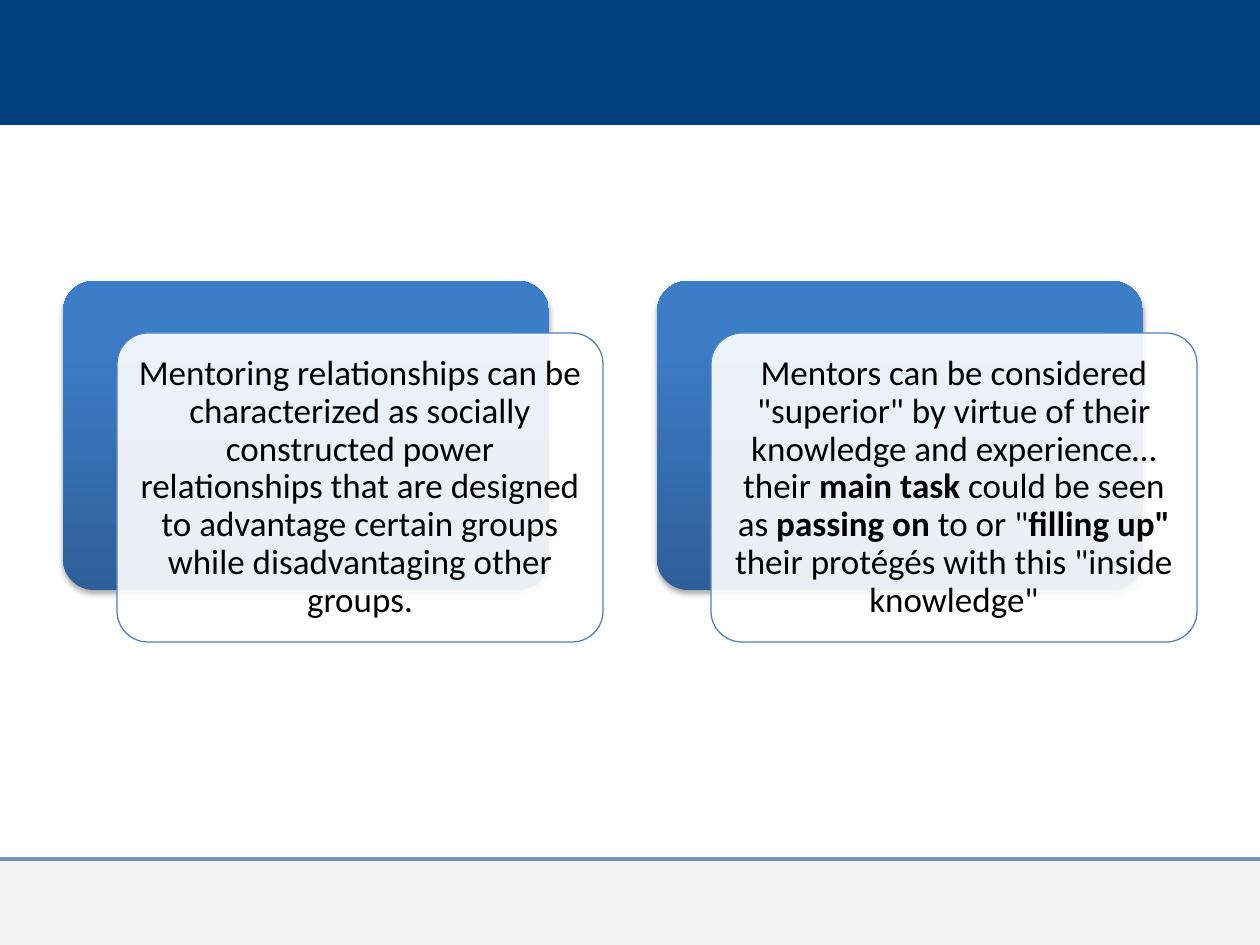
from lxml import etree
from pptx import Presentation
from pptx.dml.color import RGBColor
from pptx.enum.shapes import MSO_CONNECTOR, MSO_SHAPE
from pptx.enum.text import MSO_ANCHOR, PP_ALIGN
from pptx.oxml.ns import qn
from pptx.util import Emu, Pt

RECT = MSO_SHAPE.RECTANGLE
ROUND = MSO_SHAPE.ROUNDED_RECTANGLE
STRAIGHT = MSO_CONNECTOR.STRAIGHT

CARDS = [
    [("Mentoring relationships can be characterized as socially constructed "
      "power relationships that are designed to advantage certain groups "
      "while disadvantaging other groups.", False)],
    [('Mentors can be considered "superior" by virtue of their knowledge '
      "and experience… their ", False),
     ("main task ", True),
     ("could be seen as ", False),
     ("passing on ", True),
     ('to or "', False),
     ('filling up"', True),
     (' their protégés with this "inside knowledge"', False)],
]
COLORS = {"navy": "003E7E", "gray": "808080", "dark": "2F5F99",
          "blue": "3D7CC7", "white": "FFFFFF", "edge": "4F81BD",
          "black": "000000"}
SCALE = 914400 / 126
WIDTH, HEIGHT = 1260, 945
HEADER_H, FOOTER_TOP = 125, 859
CARD_W, CARD_H = 486, 309
LEFT, TOP, PITCH = 63, 281, 594
OFFSET_X, OFFSET_Y = 54, 52
FRAME = {"word_wrap": True, "vertical_anchor": MSO_ANCHOR.MIDDLE,
         **{f"margin_{side}": Emu(int(10 * SCALE))
            for side in ("left", "top", "right", "bottom")}}
PARAGRAPH = {"alignment": PP_ALIGN.CENTER, "line_spacing": 0.9}
FONT = {"name": "Calibri", "size": Pt(20)}


def px(n):
    return Emu(round(n * SCALE))


def rgb(name):
    return RGBColor.from_string(COLORS[name])


def apply(obj, values):
    for key, value in values.items():
        setattr(obj, key, value)


def set_alpha(fill, percent):
    color = fill._xPr.find(".//" + qn("a:srgbClr"))
    etree.SubElement(color, qn("a:alpha"), val=str(percent * 1000))


def add_box(slide, kind, x, y, w, h, color=None, alpha=None):
    sp = slide.shapes.add_shape(kind, px(x), px(y), px(w), px(h))
    sp.shadow.inherit = False
    sp.line.fill.background()
    if kind == ROUND:
        sp.adjustments[0] = 0.1
    if color:
        sp.fill.solid()
        sp.fill.fore_color.rgb = rgb(color)
    if alpha:
        set_alpha(sp.fill, alpha)
    return sp


def add_back(slide, x, y):
    sp = add_box(slide, ROUND, x, y, CARD_W, CARD_H)
    sp.fill.gradient()
    sp.fill.gradient_angle = 90
    stops = zip(sp.fill.gradient_stops, [(0, "dark"), (0.8, "blue")])
    for stop, (position, color) in stops:
        stop.position = position
        stop.color.rgb = rgb(color)
    effects = sp._element.spPr.find(qn("a:effectLst"))
    shadow = etree.SubElement(effects, qn("a:outerShdw"), blurRad="40000",
                              dist="23000", dir="5400000", rotWithShape="0")
    color = etree.SubElement(shadow, qn("a:srgbClr"), val=COLORS["black"])
    etree.SubElement(color, qn("a:alpha"), val="35000")


def add_card(slide, x, y, runs):
    sp = add_box(slide, ROUND, x, y, CARD_W, CARD_H, "white", 90)
    sp.line.color.rgb = rgb("edge")
    sp.line.width = Pt(0.75)
    tf = sp.text_frame
    apply(tf, FRAME)
    p = tf.paragraphs[0]
    apply(p, PARAGRAPH)
    for text, bold in runs:
        r = p.add_run()
        r.text = text
        apply(r.font, {**FONT, "bold": bold})
        r.font.color.rgb = rgb("black")


def main():
    prs = Presentation()
    prs.slide_width, prs.slide_height = px(WIDTH), px(HEIGHT)
    slide = prs.slides.add_slide(prs.slide_layouts[6])
    add_box(slide, RECT, 0, 0, WIDTH, HEADER_H, "navy")
    add_box(slide, RECT, 0, FOOTER_TOP, WIDTH, HEIGHT - FOOTER_TOP, "gray", 10)
    rule = slide.shapes.add_connector(STRAIGHT, 0, px(FOOTER_TOP),
                                      px(WIDTH), px(FOOTER_TOP))
    rule.line.color.rgb = rgb("navy")
    rule.line.width = Pt(2.25)
    set_alpha(rule.line.fill, 52)
    etree.SubElement(rule._element.spPr, qn("a:effectLst"))
    for i, runs in enumerate(CARDS):
        x = LEFT + i * PITCH
        add_back(slide, x, TOP)
        add_card(slide, x + OFFSET_X, TOP + OFFSET_Y, runs)
    prs.save("out.pptx")


if __name__ == "__main__":
    main()
